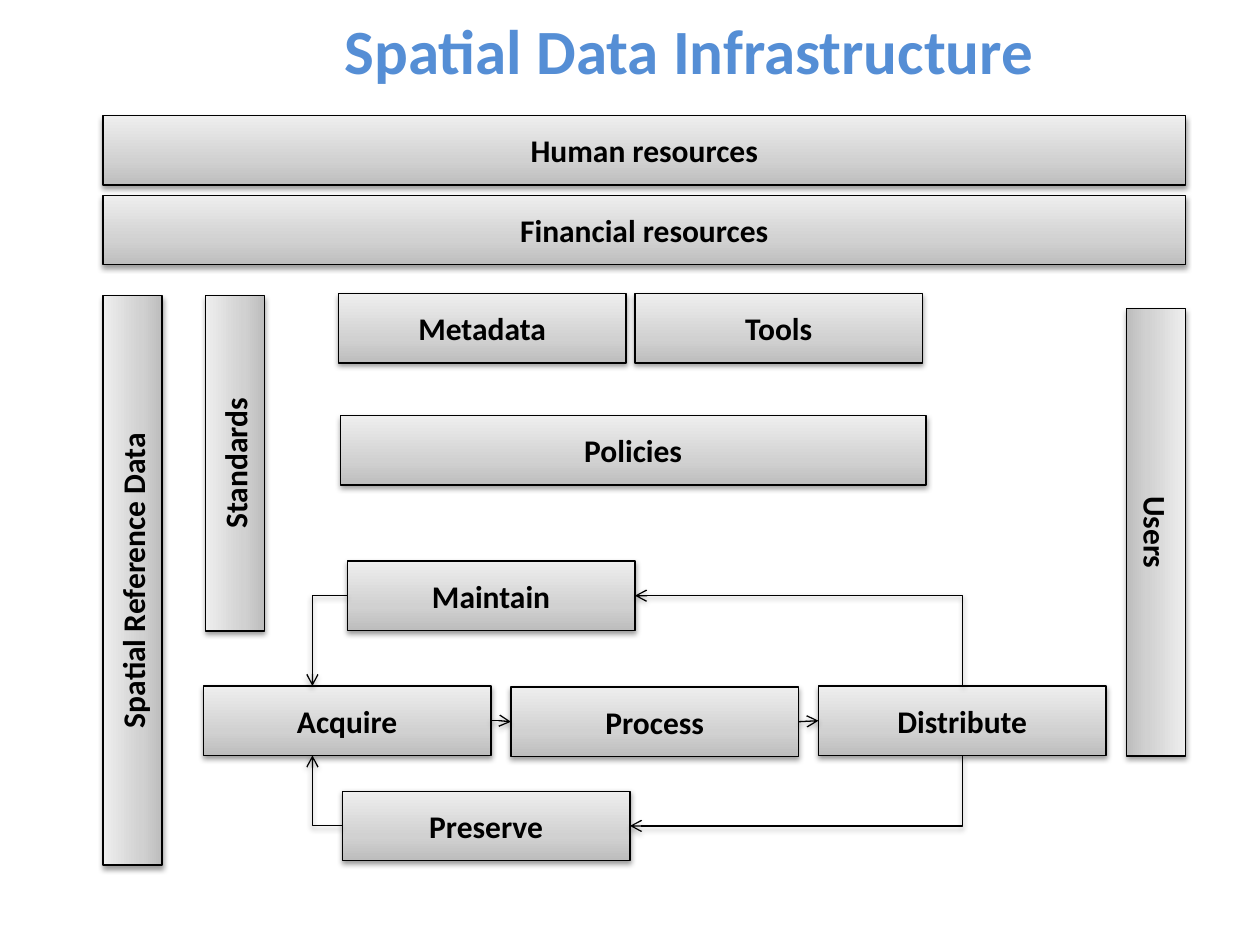
from copy import deepcopy
from dataclasses import dataclass

from pptx import Presentation
from pptx.dml.color import RGBColor
from pptx.enum.shapes import MSO_CONNECTOR, MSO_SHAPE
from pptx.enum.text import MSO_ANCHOR, PP_ALIGN
from pptx.oxml import parse_xml
from pptx.oxml.ns import nsdecls, qn
from pptx.util import Cm, Pt

RECTANGLE = MSO_SHAPE.RECTANGLE
STRAIGHT, ELBOW = MSO_CONNECTOR.STRAIGHT, MSO_CONNECTOR.ELBOW
MIDDLE, CENTER = MSO_ANCHOR.MIDDLE, PP_ALIGN.CENTER
LEFT_SIDE, RIGHT_SIDE = 1, 3

COLORS = {"ink": "000000", "title": "558ED5",
          "dark": "BDBDBD", "mid": "D1D1D1", "light": "EEEEEE"}
GRADIENT = [(0, "dark"), (0.35, "mid"), (1, "light")]
LABEL_FONT = {"name": "Calibri", "size": Pt(18), "bold": True}
TITLE_FONT = {**LABEL_FONT, "size": Pt(36)}

BAR, STEP, PILLAR = 1.4, 5.8, 1.19
MARGIN, FULL = 2.08, 21.82
STEP_TOP, RETURN_X = 13.83, 6.3


@dataclass
class Block:
    """A labelled box as it appears on the page, in cm; turn is its rotation."""
    text: str
    left: float
    top: float
    width: float = STEP
    height: float = BAR
    turn: int = 0

    @property
    def right(self) -> float:
        return self.left + self.width

    @property
    def bottom(self) -> float:
        return self.top + self.height

    @property
    def center(self) -> tuple[float, float]:
        return self.left + self.width / 2, self.top + self.height / 2


ACQUIRE = Block("Acquire", 4.1, STEP_TOP)
PROCESS = Block("Process", 10.3, STEP_TOP + 0.02)
DISTRIBUTE = Block("Distribute", 16.5, STEP_TOP)
MAINTAIN = Block("Maintain", 7, 11.31)
PRESERVE = Block("Preserve", 6.9, 15.95)
BLOCKS = [
    Block("Spatial Reference Data", MARGIN, 5.96, PILLAR, 11.48, 270),
    Block("Metadata", 6.82, 5.92),
    Block("Standards", 4.14, 5.96, PILLAR, 6.76, 270),
    Block("Tools", 12.8, 5.92),
    Block("Policies", 6.86, 8.38, 11.81),
    Block("Users", 22.71, 6.22, PILLAR, 9.02, 90),
    Block("Human resources", MARGIN, 2.33, FULL),
    Block("Financial resources", MARGIN, 3.94, FULL),
    ACQUIRE, MAINTAIN, PROCESS, DISTRIBUTE, PRESERVE,
]


def color(name: str) -> RGBColor:
    return RGBColor.from_string(COLORS[name])


def write(shape, text: str, font: dict, ink: str) -> None:
    frame = shape.text_frame
    frame.word_wrap = True
    frame.vertical_anchor = MIDDLE
    para = frame.paragraphs[0]
    para.alignment = CENTER
    span = para.add_run()
    span.text = text
    for name, value in font.items():
        setattr(span.font, name, value)
    span.font.color.rgb = color(ink)


def outline(shape) -> None:
    shape.line.color.rgb = color("ink")
    shape.line.width = Pt(0.75)


def add_shadow(shape) -> None:
    """Append the soft drop shadow; fill and line must already be set."""
    shape._element.spPr.append(parse_xml(
        f'<a:effectLst {nsdecls("a")}><a:outerShdw blurRad="40000" dist="20000" '
        f'dir="5400000" rotWithShape="0"><a:srgbClr val="{COLORS["ink"]}">'
        '<a:alpha val="38000"/></a:srgbClr></a:outerShdw></a:effectLst>'))


def fill_gradient(shape) -> None:
    shape.fill.gradient()
    shape.fill.gradient_angle = 90
    stop_list = shape._element.spPr.find(".//" + qn("a:gsLst"))
    stop_list.append(deepcopy(stop_list[0]))
    for stop, (position, name) in zip(shape.fill.gradient_stops, GRADIENT):
        stop.position = position
        stop.color.rgb = color(name)


def draw_block(page, block: Block):
    width, height = block.width, block.height
    if block.turn:
        width, height = height, width
    x, y = block.center
    shape = page.shapes.add_shape(RECTANGLE, Cm(x - width / 2), Cm(y - height / 2),
                                  Cm(width), Cm(height))
    shape.rotation = block.turn
    fill_gradient(shape)
    outline(shape)
    add_shadow(shape)
    write(shape, block.text, LABEL_FONT, "ink")
    return shape


def draw_arrow(page, kind, start: tuple[float, float], end: tuple[float, float]):
    arrow = page.shapes.add_connector(kind, *map(Cm, start + end))
    outline(arrow)
    arrow.line._get_or_add_ln().append(
        parse_xml(f'<a:tailEnd {nsdecls("a")} type="arrow"/>'))
    add_shadow(arrow)
    return arrow


def draw_corner(page, start: tuple[float, float], end: tuple[float, float],
                vertical_first: bool = False) -> None:
    """Draw an arrow with one bend; a vertical first leg must then run left."""
    turn = 0
    if vertical_first:
        (x1, y1), (x2, y2) = start, end
        x, y = (x1 + x2) / 2, (y1 + y2) / 2
        across, down = abs(y2 - y1) / 2, abs(x2 - x1) / 2
        turn = 90
        if y2 < y1:
            turn, down = 270, -down
        start, end = (x - across, y - down), (x + across, y + down)
    properties = draw_arrow(page, ELBOW, start, end)._element.spPr
    properties.find(qn("a:prstGeom")).set("prst", "bentConnector2")
    properties.find(qn("a:xfrm")).set("rot", str(turn * 60000))


def draw_link(page, kind, source: Block, target: Block, shapes: dict) -> None:
    arrow = draw_arrow(page, kind, (source.right, source.center[1]),
                       (target.left, target.center[1]))
    arrow.begin_connect(shapes[source.text], RIGHT_SIDE)
    arrow.end_connect(shapes[target.text], LEFT_SIDE)


def main() -> None:
    deck = Presentation()
    deck.slide_width, deck.slide_height = Cm(25.4), Cm(19.05)
    page = deck.slides.add_slide(deck.slide_layouts[6])

    shapes = {block.text: draw_block(page, block) for block in BLOCKS}
    draw_link(page, ELBOW, ACQUIRE, PROCESS, shapes)
    draw_link(page, STRAIGHT, PROCESS, DISTRIBUTE, shapes)
    for block, edge in ((MAINTAIN, "top"), (PRESERVE, "bottom")):
        middle = block.center[1]
        draw_corner(page, (DISTRIBUTE.center[0], getattr(DISTRIBUTE, edge)),
                    (block.right, middle), vertical_first=True)
        draw_corner(page, (block.left, middle), (RETURN_X, getattr(ACQUIRE, edge)))

    title = page.shapes.add_textbox(Cm(5.69), Cm(0.53), Cm(16.41), Cm(0.94))
    write(title, "Spatial Data Infrastructure", TITLE_FONT, "title")
    deck.save("out.pptx")


if __name__ == "__main__":
    main()
